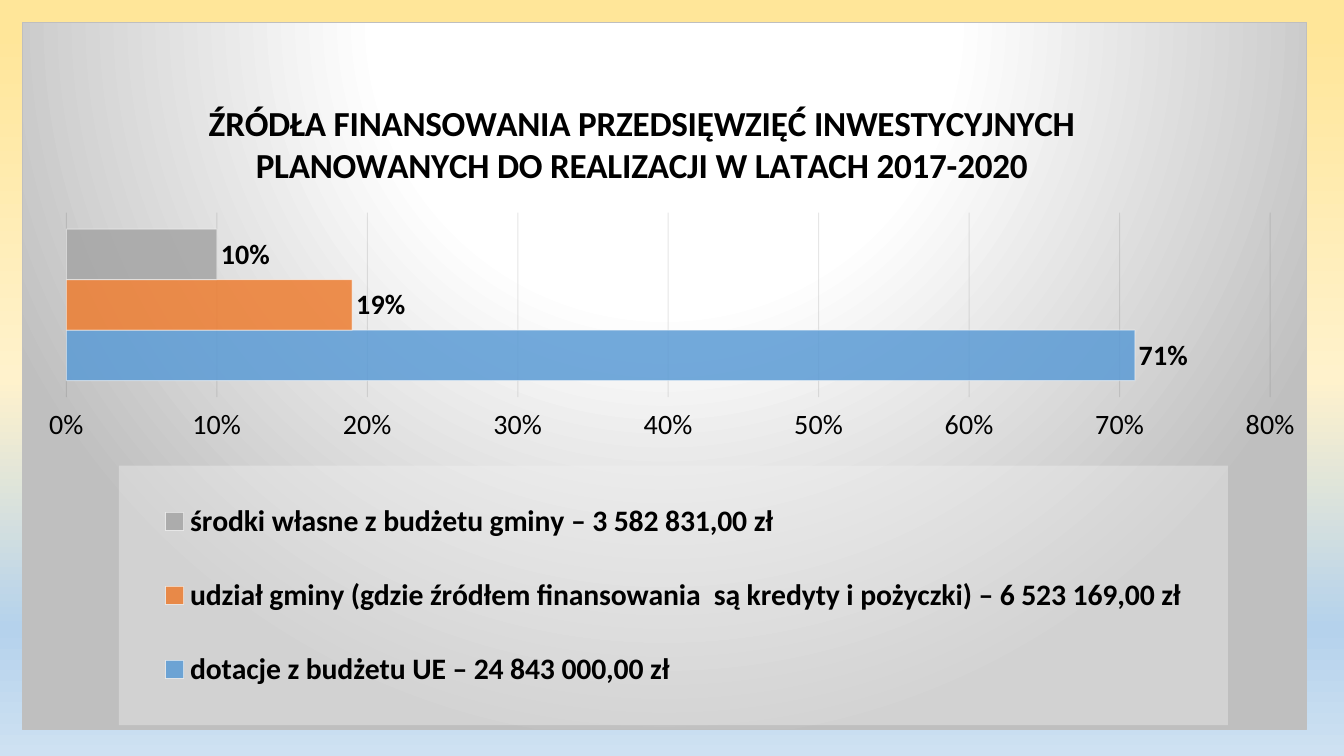
from lxml import etree
from pptx import Presentation
from pptx import util as u
from pptx.chart.data import CategoryChartData
from pptx.dml.color import RGBColor
from pptx.enum import chart as ch
from pptx.oxml import parse_xml
from pptx.oxml.ns import nsdecls, qn

WIDTH, HEIGHT = u.Inches(13.33), u.Inches(7.5)
FONT = "Calibri"
TITLE = ("ŹRÓDŁA FINANSOWANIA PRZEDSIĘWZIĘĆ INWESTYCYJNYCH "
         "PLANOWANYCH DO REALIZACJI W LATACH 2017-2020")
SOURCES = [
    ("dotacje z budżetu UE – 24 843 000,00 zł", 0.71, "5B9BD5"),
    ("udział gminy (gdzie źródłem finansowania  są kredyty i pożyczki) – 6 523 169,00 zł",
     0.19, "ED7D31"),
    ("środki własne z budżetu gminy – 3 582 831,00 zł", 0.10, "A5A5A5"),
]


def rgb(value):
    return RGBColor.from_string(value)


def set_font(font, size, bold=False):
    font.name, font.size, font.bold = FONT, u.Pt(size), bold
    font.color.rgb = rgb("000000")


def set_line(line, color, width=0.75):
    line.color.rgb = rgb(color)
    line.width = u.Pt(width)


def gradient(stops, direction):
    """Gradient fill XML from (percent, colour) stops and a direction element."""
    marks = "".join(f'<a:gs pos="{pos * 1000}"><a:srgbClr val="{color}"/></a:gs>'
                    for pos, color in stops)
    return f'<a:gradFill rotWithShape="1"><a:gsLst>{marks}</a:gsLst>{direction}</a:gradFill>'


def panel(fill, line=""):
    """Shape properties for a chart part."""
    return parse_xml(f'<c:spPr {nsdecls("c", "a")}>{fill}{line}</c:spPr>')


def fade(element, *percents):
    """Give the colours inside element their opacities, in order."""
    for color, percent in zip(element.iter(qn("a:srgbClr")), percents):
        etree.SubElement(color, qn("a:alpha")).set("val", str(percent * 1000))


def place(part, index, x, y, w=None, h=None, inner=False):
    """Lay out a chart part by shares of the chart's size."""
    for old in part.findall(qn("c:layout")):
        part.remove(old)
    target = '<c:layoutTarget val="inner"/>' if inner else ""
    modes = '<c:xMode val="edge"/><c:yMode val="edge"/>'
    sizes = "".join(f'<c:{tag} val="{share}"/>'
                    for tag, share in zip("xywh", (x, y, w, h)) if share is not None)
    part.insert(index, parse_xml(
        f'<c:layout {nsdecls("c")}><c:manualLayout>{target}{modes}{sizes}'
        '</c:manualLayout></c:layout>'))


def paint_background(slide):
    slide.background.fill.solid()
    properties = slide.background._cSld.find(qn("p:bg")).find(qn("p:bgPr"))
    fill = gradient([(4, "FFE699"), (50, "FFF2CC"), (83, "B5D2EC"), (100, "CEE1F2")],
                    '<a:lin ang="5400000" scaled="0"/>')
    properties.replace(properties[0], parse_xml(
        fill.replace("<a:gradFill", f'<a:gradFill {nsdecls("a")}', 1)))


def add_funding_chart(slide):
    data = CategoryChartData(number_format="0%")
    data.categories = ["1"]
    for name, share, _ in SOURCES:
        data.add_series(name, [share])
    chart = slide.shapes.add_chart(
        ch.XL_CHART_TYPE.BAR_CLUSTERED, u.Inches(0.22), u.Inches(0.22),
        u.Inches(12.74), u.Inches(7.02), data).chart
    set_font(chart.font, 10)
    fill = gradient([(0, "FFFFFF"), (39, "FFFFFF"), (100, "BFBFBF")],
                    '<a:path path="circle"><a:fillToRect l="50000" t="-80000" '
                    'r="50000" b="180000"/></a:path>')
    border = '<a:ln w="9525"><a:solidFill><a:srgbClr val="BFBFBF"/></a:solidFill></a:ln>'
    space = chart._chartSpace
    space.find(qn("c:chart")).addnext(panel(fill, border))
    place(space.find(qn("c:chart")).find(qn("c:plotArea")), 0,
          0.034, 0.269, 0.938, 0.261, inner=True)
    return chart


def style_title(chart):
    chart.has_title = True
    heading = chart.chart_title.text_frame
    heading.text = TITLE
    set_font(heading.paragraphs[0].font, 25.1, True)
    chart.chart_title.include_in_layout = False
    place(chart.chart_title._element, 1, 0.14, 0.1)


def style_axes(chart):
    chart.category_axis.visible = False
    scale = chart.value_axis
    scale.minimum_scale, scale.maximum_scale, scale.major_unit = 0, 0.8, 0.1
    scale.major_tick_mark = ch.XL_TICK_MARK.OUTSIDE
    scale.format.line.fill.background()
    scale.tick_labels.number_format = "0%"
    scale.tick_labels.number_format_is_linked = False
    set_font(scale.tick_labels.font, 20)
    set_line(scale.major_gridlines.format.line, "0D0D0D")
    fade(scale._element.find(qn("c:majorGridlines")), 10)


def style_bars(chart):
    plot = chart.plots[0]
    plot.gap_width, plot.overlap, plot.vary_by_categories = 65, 0, False
    for bar, (_, _, color) in zip(plot.series, SOURCES):
        bar.format.fill.solid()
        bar.format.fill.fore_color.rgb = rgb(color)
        set_line(bar.format.line, "FFFFFF")
        fade(bar._element.find(qn("c:spPr")), 85, 50)
        labels = bar.data_labels
        labels.show_value = True
        labels.position = ch.XL_LABEL_POSITION.OUTSIDE_END
        labels.number_format, labels.number_format_is_linked = "0%", False
        set_font(labels.font, 20, True)


def style_legend(chart):
    chart.has_legend = True
    legend = chart.legend
    legend.position = ch.XL_LEGEND_POSITION.BOTTOM
    legend.include_in_layout = False
    set_font(legend.font, 21.2, True)
    place(legend._element, 1, 0.075, 0.627, 0.864, 0.367)
    box = panel('<a:solidFill><a:srgbClr val="F2F2F2"/></a:solidFill>')
    fade(box, 39)
    legend._element.find(qn("c:overlay")).addnext(box)


def main():
    deck = Presentation()
    deck.slide_width, deck.slide_height = WIDTH, HEIGHT
    slide = deck.slides.add_slide(deck.slide_layouts[6])
    paint_background(slide)
    chart = add_funding_chart(slide)
    style_title(chart)
    style_axes(chart)
    style_bars(chart)
    style_legend(chart)
    deck.save("out.pptx")


if __name__ == "__main__":
    main()
